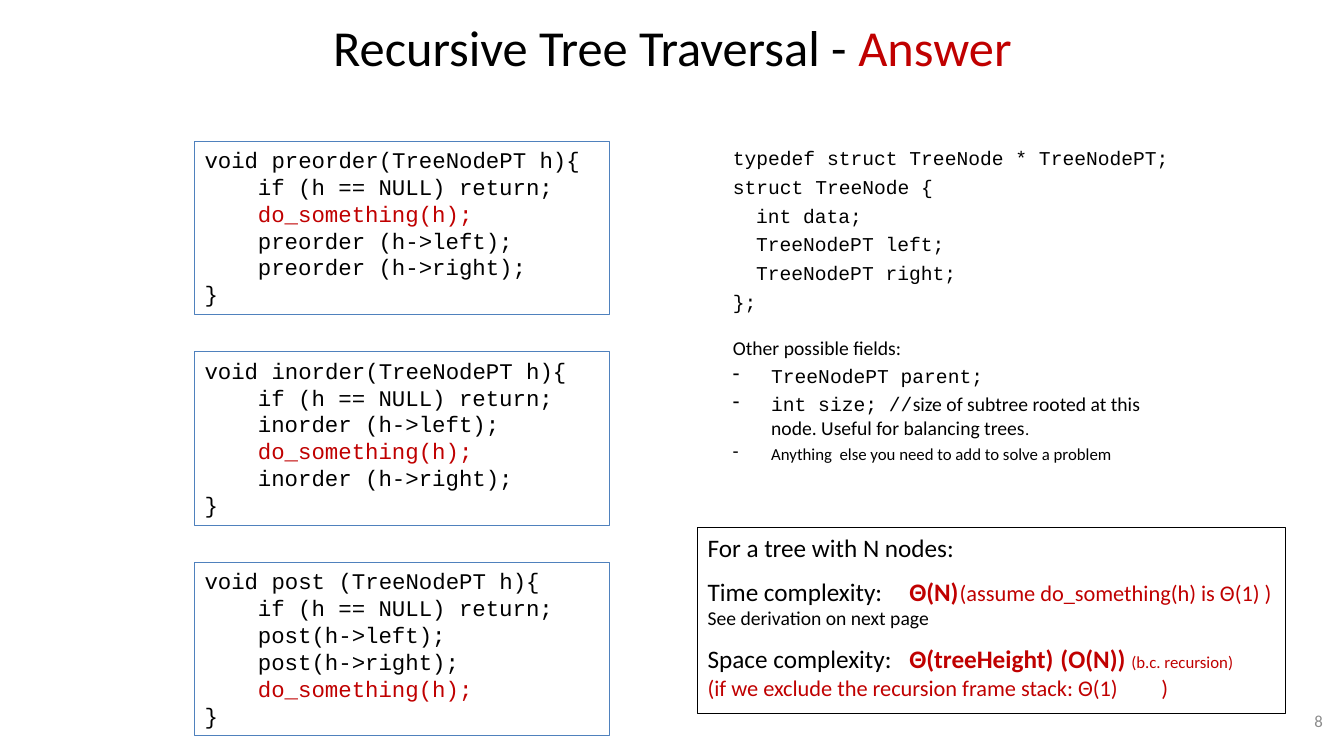
"""Build the slide on recursive tree traversal."""
from dataclasses import dataclass

import pptx
import pptx.dml.color
import pptx.enum.shapes
import pptx.enum.text
import pptx.oxml
import pptx.oxml.ns
import pptx.util

Inches = pptx.util.Inches
ALIGN = pptx.enum.text.PP_ALIGN
ANCHOR = pptx.enum.text.MSO_ANCHOR


@dataclass(frozen=True)
class Theme:
    ink: str = "000000"
    answer: str = "C00000"
    code_border: str = "4F81BD"
    muted: str = "8C8C8C"
    prose: str = "Calibri"
    mono: str = "Courier New"
    title: int = 36
    lead: int = 18
    code: int = 16
    body: int = 14
    small: int = 12


THEME = Theme()


@dataclass(frozen=True)
class Span:
    text: str
    size: int = THEME.body
    font: str = THEME.prose
    color: str = THEME.ink
    bold: bool = False


@dataclass(frozen=True)
class Line:
    spans: tuple[Span, ...]
    before: float = 0
    indent: float = 0
    bullet: str = ""
    tabs: tuple[float, ...] = ()
    align: ALIGN = ALIGN.LEFT


@dataclass(frozen=True)
class Area:
    left: float
    top: float
    width: float
    height: float


@dataclass(frozen=True)
class Traversal:
    signature: str
    steps: tuple[str, ...]


VISIT = "do_something(h);"
TRAVERSALS = (
    Traversal("preorder(TreeNodePT h)", (VISIT, "preorder (h->left);", "preorder (h->right);")),
    Traversal("inorder(TreeNodePT h)", ("inorder (h->left);", VISIT, "inorder (h->right);")),
    Traversal("post (TreeNodePT h)", ("post(h->left);", "post(h->right);", VISIT)),
)
CODE_TOP, CODE_PITCH = 1.4, 2.09
CODE_INDENT, FIELD_INDENT, BULLET_INDENT = 0.53, 0.23, 0.38
BODY_GAP = 3.7


def add_properties(paragraph, line: Line) -> None:
    """Set the spacing, indent, bullet and tab stops of a paragraph."""
    paragraph.alignment = line.align
    paragraph.space_before = pptx.util.Pt(line.before)
    properties = paragraph._p.get_or_add_pPr()
    properties.set("marL", str(Inches(line.indent)))
    properties.set("indent", str(-Inches(line.indent) if line.bullet else 0))
    if line.bullet:
        bullet = pptx.oxml.parse_xml(f'<a:buChar {pptx.oxml.ns.nsdecls("a")} char="{line.bullet}"/>')
        properties.append(bullet)
    if line.tabs:
        stops = "".join(f'<a:tab pos="{Inches(stop)}" algn="l"/>' for stop in line.tabs)
        properties.append(pptx.oxml.parse_xml(f'<a:tabLst {pptx.oxml.ns.nsdecls("a")}>{stops}</a:tabLst>'))


def add_text(slide, area: Area, lines: list[Line], *, border: str = "",
             anchor: ANCHOR = ANCHOR.TOP) -> None:
    """Place formatted lines, inside a rectangle when a border colour is given."""
    place = [Inches(length) for length in (area.left, area.top, area.width, area.height)]
    if border:
        holder = slide.shapes.add_shape(pptx.enum.shapes.MSO_SHAPE.RECTANGLE, *place)
        holder.shadow.inherit = False
        holder.fill.background()
        holder.line.color.rgb = pptx.dml.color.RGBColor.from_string(border)
        holder.line.width = pptx.util.Pt(0.75)
    else:
        holder = slide.shapes.add_textbox(*place)
    frame = holder.text_frame
    frame.word_wrap = True
    frame.vertical_anchor = anchor
    for index, line in enumerate(lines):
        paragraph = frame.add_paragraph() if index else frame.paragraphs[0]
        add_properties(paragraph, line)
        for span in line.spans:
            run = paragraph.add_run()
            run.text = span.text
            run.font.size = pptx.util.Pt(span.size)
            run.font.name = span.font
            run.font.bold = span.bold
            run.font.color.rgb = pptx.dml.color.RGBColor.from_string(span.color)


def code_line(text: str, indent: float = 0) -> Line:
    """Return a line of traversal code, with the visit step highlighted."""
    color = THEME.answer if text == VISIT else THEME.ink
    return Line((Span(text, THEME.code, THEME.mono, color),), indent=indent)


def traversal_lines(traversal: Traversal) -> list[Line]:
    """Return the whole function of a traversal."""
    steps = ("if (h == NULL) return;", *traversal.steps)
    return [code_line(f"void {traversal.signature}{{"),
            *(code_line(step, CODE_INDENT) for step in steps),
            code_line("}")]


def struct_lines() -> list[Line]:
    """Return the node type and its other possible fields."""
    declaration = (
        ("typedef struct TreeNode * TreeNodePT;", 0),
        ("struct TreeNode {", 0),
        ("int data;", FIELD_INDENT),
        ("TreeNodePT left;", FIELD_INDENT),
        ("TreeNodePT right;", FIELD_INDENT),
        ("};", 0),
    )
    extras = (
        (Span("TreeNodePT parent;", font=THEME.mono),),
        (Span("int size; //", font=THEME.mono),
         Span("size of subtree rooted at this node. Useful for balancing trees"),
         Span(".", THEME.small)),
        (Span("Anything  else you need to add to solve a problem", THEME.small),),
    )
    return [*(Line((Span(text, font=THEME.mono),), BODY_GAP, indent) for text, indent in declaration),
            Line((Span("Other possible fields:"),), before=16),
            *(Line(spans, 3.3, BULLET_INDENT, "-") for spans in extras)]


def complexity_lines() -> list[Line]:
    """Return the time and space complexity answers."""
    red = THEME.answer
    return [
        Line((Span("For a tree with N nodes:", THEME.lead),)),
        Line((Span("Time complexity:\t", THEME.lead),
              Span("Θ(N)\t", THEME.lead, color=red, bold=True),
              Span("(assume do_something(h) is Θ(1) )", THEME.code, color=red)),
             before=9.8, tabs=(1.9, 2.5)),
        Line((Span("See derivation on next page"),)),
        Line((Span("Space complexity:\t", THEME.lead),
              Span("Θ(treeHeight)\t(O(N)) ", THEME.lead, color=red, bold=True),
              Span("(b.c. recursion)", THEME.small, color=red)),
             before=9.8, tabs=(1.93, 3.46)),
        Line((Span("(if we exclude the recursion frame stack: Θ(1)\t)", THEME.code, color=red),),
             tabs=(4.21,)),
    ]


def main() -> None:
    """Build and save the slide."""
    deck = pptx.Presentation()
    deck.slide_width, deck.slide_height = Inches(13.33), Inches(7.5)
    slide = deck.slides.add_slide(deck.slide_layouts[6])
    heading = Line((Span("Recursive Tree Traversal - ", THEME.title),
                    Span("Answer", THEME.title, color=THEME.answer)), align=ALIGN.CENTER)
    page = Line((Span("8", THEME.small, color=THEME.muted),), align=ALIGN.RIGHT)
    add_text(slide, Area(2.17, 0.08, 9, 0.75), [heading], anchor=ANCHOR.MIDDLE)
    add_text(slide, Area(10.11, 6.95, 3.11, 0.4), [page], anchor=ANCHOR.MIDDLE)
    for row, traversal in enumerate(TRAVERSALS):
        area = Area(1.93, CODE_TOP + row * CODE_PITCH, 4.12, 1.72)
        add_text(slide, area, traversal_lines(traversal), border=THEME.code_border)
    add_text(slide, Area(6.92, 5.23, 5.83, 1.85), complexity_lines(), border=THEME.ink)
    add_text(slide, Area(7.17, CODE_TOP, 4.58, 3.51), struct_lines())
    deck.save("out.pptx")


if __name__ == "__main__":
    main()
